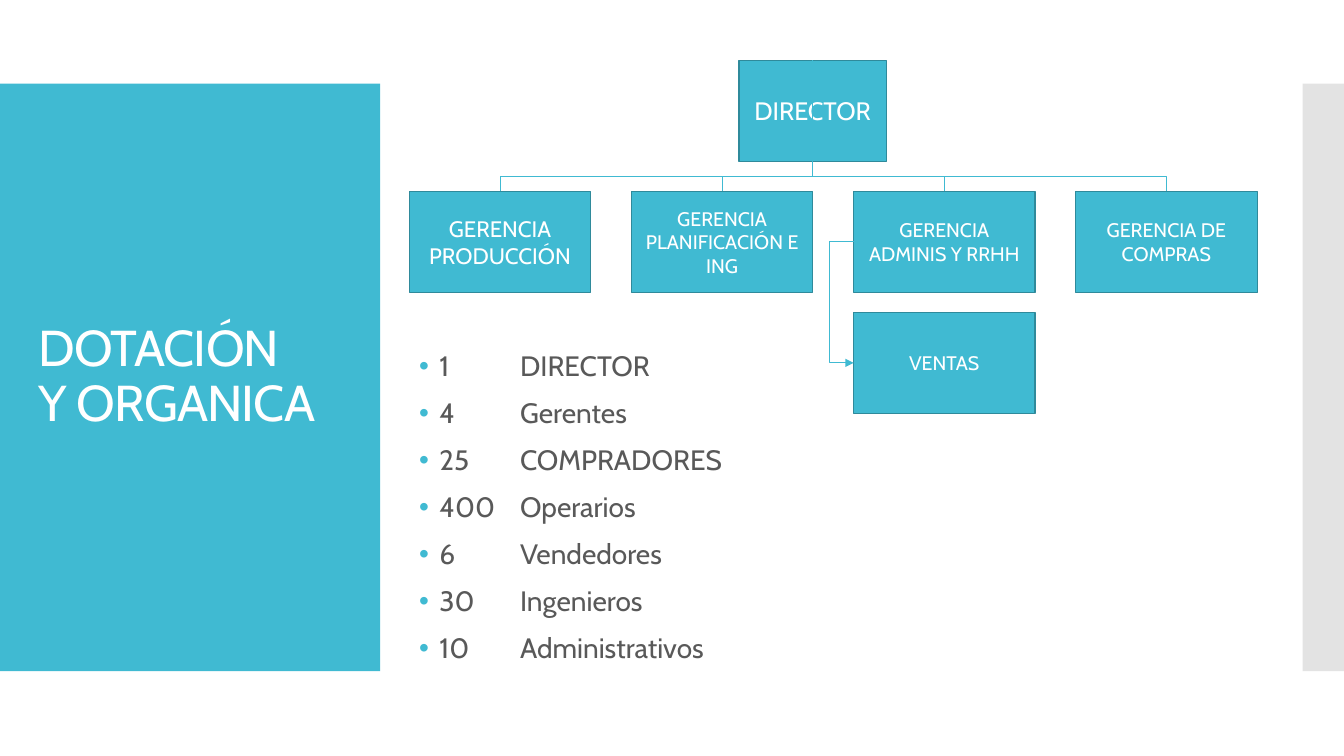
import pptx
import pptx.util
import pptx.dml.color
import pptx.enum.shapes
import pptx.enum.text
import pptx.oxml
import pptx.oxml.ns

Inches = pptx.util.Inches
Pt = pptx.util.Pt
qn = pptx.oxml.ns.qn
CONNECTOR = pptx.enum.shapes.MSO_CONNECTOR
ANCHOR = pptx.enum.text.MSO_ANCHOR
ALIGN = pptx.enum.text.PP_ALIGN

COLORS = {
    "teal": "40BAD2",
    "edge": "2F8A9B",
    "gray": "C8C8C8",
    "text": "595959",
    "white": "FFFFFF",
}
FONT = "Cabin"
BOX_W, BOX_H = 1.8, 1
ROW_X, ROW_Y, ROW_STEP = 4.06, 1.9, 2.203
CENTER_X, DIRECTOR_Y = 8.06, 0.6
MANAGERS = [
    ("GERENCIA PRODUCCIÓN", 16),
    ("GERENCIA PLANIFICACIÓN E ING", 14),
    ("GERENCIA ADMINIS Y RRHH", 14),
    ("GERENCIA DE COMPRAS", 14),
]
STAFF = [
    (1, "DIRECTOR"),
    (4, "Gerentes"),
    (25, "COMPRADORES"),
    (400, "Operarios"),
    (6, "Vendedores"),
    (30, "Ingenieros"),
    (10, "Administrativos"),
]


def rgb(name):
    return pptx.dml.color.RGBColor.from_string(COLORS[name])


def set_all(obj, values):
    for key, value in values.items():
        setattr(obj, key, value)


def add_xml(parent, tag, **attrs):
    el = pptx.oxml.parse_xml(f"<a:{tag} {pptx.oxml.ns.nsdecls('a')}/>")
    for key, value in attrs.items():
        el.set(key, str(value))
    parent.append(el)
    return el


def format_run(r, size, color):
    set_all(r.font, {"name": FONT, "size": Pt(size)})
    r.font.color.rgb = rgb(color)


def add_rect(s, x, y, w, h, color):
    sp = s.shapes.add_shape(
        pptx.enum.shapes.MSO_SHAPE.RECTANGLE, Inches(x), Inches(y), Inches(w), Inches(h)
    )
    sp.shadow.inherit = False
    sp.fill.solid()
    sp.fill.fore_color.rgb = rgb(color)
    return sp


def add_panel(s, x, w, color, alpha=None):
    sp = add_rect(s, x, 0.83, w, 5.83, color)
    sp.line.fill.background()
    if alpha:
        clr = sp._element.spPr.find(qn("a:solidFill"))[0]
        add_xml(clr, "alpha", val=alpha * 1000)
    s.shapes.title._element.addprevious(sp._element)


def add_box(s, text, size, x, y, w=BOX_W):
    sp = add_rect(s, x, y, w, BOX_H, "teal")
    sp.line.color.rgb = rgb("edge")
    sp.line.width = Pt(0.85)
    tf = sp.text_frame
    set_all(tf, {"word_wrap": True, "vertical_anchor": ANCHOR.MIDDLE})
    p = tf.paragraphs[0]
    p.alignment = ALIGN.CENTER
    r = p.add_run()
    r.text = text
    format_run(r, size, "white")
    return sp


def add_line(s, kind, x1, y1, x2, y2, rotation=0):
    cn = s.shapes.add_connector(kind, Inches(x1), Inches(y1), Inches(x2), Inches(y2))
    cn.line.color.rgb = rgb("teal")
    cn.line.width = Pt(0.75)
    add_xml(cn._element.spPr, "effectLst")
    if rotation:
        cn._element.spPr.find(qn("a:xfrm")).set("rot", str(rotation * 60000))
    return cn


def add_branch(s, x1, y1, x2, y2):
    cx, cy = (x1 + x2) / 2, (y1 + y2) / 2
    half_w, half_h = (y2 - y1) / 2, abs(x2 - x1) / 2
    rotation = 90
    if x2 > x1:
        half_w, rotation = -half_w, 270
    add_line(s, CONNECTOR.ELBOW, cx - half_w, cy - half_h, cx + half_w, cy + half_h, rotation)


def add_side_arrow(s, x, y1, y2):
    cn = add_line(s, CONNECTOR.ELBOW, x, y2, x + 0.01, y1, 180)
    guides = cn._element.spPr.find(qn("a:prstGeom")).find(qn("a:avLst"))
    add_xml(guides, "gd", name="adj1", fmla="val 2500000")
    add_xml(cn.line._get_or_add_ln(), "tailEnd", type="triangle")


def format_title(sp):
    place = {"left": 0.28, "top": 1.23, "width": 3.22, "height": 5.03}
    set_all(sp, {key: Inches(value) for key, value in place.items()})
    tf = sp.text_frame
    set_all(tf, {
        "word_wrap": True,
        "vertical_anchor": ANCHOR.MIDDLE,
        "auto_size": pptx.enum.text.MSO_AUTO_SIZE.NONE,
    })
    tf.text = "DOTACIÓN\vY ORGANICA"
    p = tf.paragraphs[0]
    set_all(p, {"alignment": ALIGN.LEFT, "line_spacing": 0.9})
    for r in p.runs:
        format_run(r, 36, "white")
        r._r.get_or_add_rPr().set("spc", "-60")


def add_staff_list(s):
    sp = s.shapes.add_textbox(Inches(4.06), Inches(2.48), Inches(8), Inches(5.6))
    tf = sp.text_frame
    set_all(tf, {
        "word_wrap": True,
        "vertical_anchor": ANCHOR.MIDDLE,
        "margin_bottom": Inches(0.52),
    })
    for i, (count, role) in enumerate(STAFF):
        p = tf.add_paragraph() if i else tf.paragraphs[0]
        set_all(p, {"line_spacing": 0.9, "space_before": Pt(12)})
        pPr = p._p.get_or_add_pPr()
        pPr.set("marL", str(Inches(0.2)))
        pPr.set("indent", str(Inches(-0.2)))
        add_xml(add_xml(pPr, "buClr"), "srgbClr", val=COLORS["teal"])
        add_xml(pPr, "buFont", typeface="Arial")
        add_xml(pPr, "buChar", char="•")
        add_xml(add_xml(pPr, "tabLst"), "tab", pos=Inches(1), algn="l")
        r = p.add_run()
        r.text = f"{count}\t{role}"
        format_run(r, 20, "text")


def main():
    prs = pptx.Presentation()
    prs.slide_width, prs.slide_height = Inches(13.33), Inches(7.5)
    s = prs.slides.add_slide(prs.slide_layouts[5])
    add_panel(s, 0, 3.77, "teal")
    add_panel(s, 12.92, 0.41, "gray", 50)
    format_title(s.shapes.title)
    add_staff_list(s)

    director = add_box(s, "DIRECTOR", 18, CENTER_X - 0.73, DIRECTOR_Y, 1.46)
    columns = [ROW_X + i * ROW_STEP for i in range(len(MANAGERS))]
    for x, (text, size) in zip(columns, MANAGERS):
        add_box(s, text, size, x, ROW_Y)
    sales_x, sales_y = columns[2], ROW_Y + 1.2
    add_box(s, "VENTAS", 14, sales_x, sales_y)

    add_side_arrow(s, sales_x, ROW_Y + BOX_H / 2, sales_y + BOX_H / 2)
    bottom = DIRECTOR_Y + BOX_H
    stem = add_line(s, CONNECTOR.STRAIGHT, CENTER_X, bottom, CENTER_X, DIRECTOR_Y)
    stem.begin_connect(director, 2)
    stem.end_connect(director, 0)
    for x in columns:
        add_branch(s, CENTER_X, bottom, x + BOX_W / 2, ROW_Y)
    prs.save("out.pptx")


if __name__ == "__main__":
    main()
